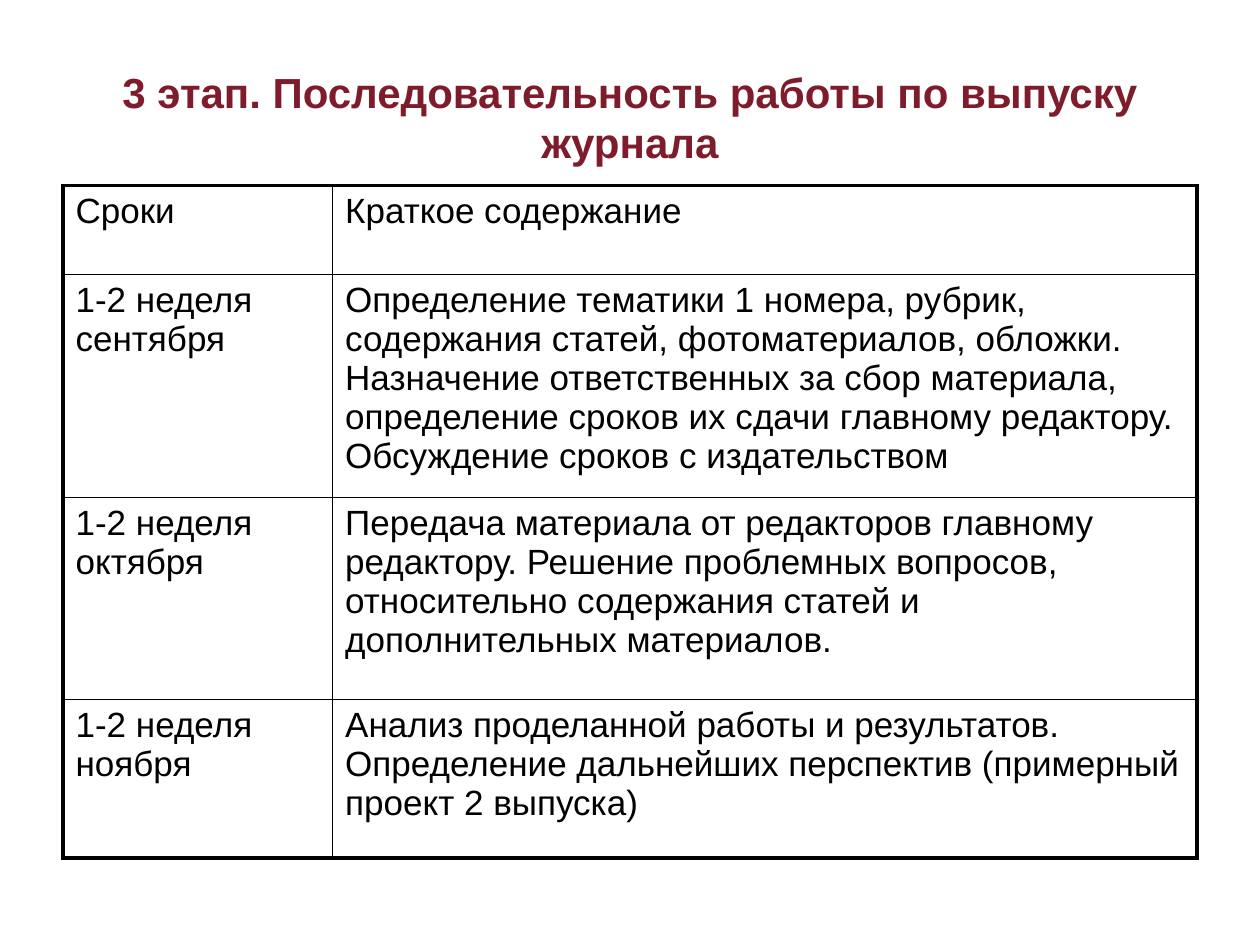
from dataclasses import dataclass

from lxml import etree
from pptx import Presentation
from pptx.dml.color import RGBColor
from pptx.enum.text import MSO_ANCHOR, PP_ALIGN
from pptx.oxml.ns import qn
from pptx.util import Inches, Pt

CENTER = PP_ALIGN.CENTER
LEFT = PP_ALIGN.LEFT
MIDDLE = MSO_ANCHOR.MIDDLE
BLANK_LAYOUT = 6


@dataclass(frozen=True)
class Theme:
    """Colours, font, type sizes and line widths of the slide."""
    font: str = "Arial"
    title_color: str = "7E1C2C"
    text_color: str = "000000"
    border_color: str = "000000"
    title_size: float = 24
    text_size: float = 20
    outer_border: float = 2.25
    inner_border: float = 1


THEME = Theme()
TITLE = "3 этап. Последовательность работы по выпуску журнала"
COLUMN_WIDTHS = (2.14, 6.86)
ROW_HEIGHTS = (0.71, 1.77, 1.6, 1.26)
SCHEDULE = (
    ("Сроки", "Краткое содержание"),
    ("1-2 неделя сентября",
     "Определение тематики 1 номера, рубрик, содержания статей, фотоматериалов, "
     "обложки. Назначение ответственных за сбор материала, определение сроков их "
     "сдачи главному редактору. Обсуждение сроков с издательством"),
    ("1-2 неделя октября",
     "Передача материала от редакторов главному редактору. Решение проблемных "
     "вопросов, относительно содержания статей и дополнительных материалов."),
    ("1-2 неделя ноября",
     "Анализ проделанной работы и результатов. Определение дальнейших перспектив "
     "(примерный проект 2 выпуска)"),
)


def write_text(frame, text, size, color, bold=False, align=LEFT):
    """Put one styled paragraph into a text frame."""
    frame.word_wrap = True
    para = frame.paragraphs[0]
    para.text = text
    para.alignment = align
    para.font.name = THEME.font
    para.font.size = Pt(size)
    para.font.bold = bold
    para.font.color.rgb = RGBColor.from_string(color)


def add_title(page):
    """Add the centred heading."""
    box = page.shapes.add_textbox(Inches(0.5), Inches(0.3), Inches(9), Inches(1.25))
    box.text_frame.vertical_anchor = MIDDLE
    write_text(box.text_frame, TITLE, THEME.title_size, THEME.title_color, True, CENTER)


def set_border(cell, side, width):
    """Draw a solid line on one side of a cell."""
    properties = cell._tc.get_or_add_tcPr()
    line = etree.SubElement(properties, qn(f"a:ln{side}"), w=str(Pt(width)))
    fill = etree.SubElement(line, qn("a:solidFill"))
    etree.SubElement(fill, qn("a:srgbClr"), val=THEME.border_color)


def style_cell(cell, row, column):
    """Give a cell thick lines on the table's edge and thin ones inside."""
    on_edge = {
        "L": column == 0,
        "R": column == len(COLUMN_WIDTHS) - 1,
        "T": row == 0,
        "B": row == len(ROW_HEIGHTS) - 1,
    }
    for side, outer in on_edge.items():
        set_border(cell, side, THEME.outer_border if outer else THEME.inner_border)
    cell.fill.background()


def add_schedule(page):
    """Add the table of terms and tasks."""
    table = page.shapes.add_table(
        len(ROW_HEIGHTS), len(COLUMN_WIDTHS), Inches(0.5), Inches(1.47),
        Inches(sum(COLUMN_WIDTHS)), Inches(sum(ROW_HEIGHTS))).table
    table.first_row = False
    table.horz_banding = False
    for column, width in zip(table.columns, COLUMN_WIDTHS):
        column.width = Inches(width)
    for row, height in zip(table.rows, ROW_HEIGHTS):
        row.height = Inches(height)
    for row, texts in enumerate(SCHEDULE):
        for column, text in enumerate(texts):
            cell = table.cell(row, column)
            write_text(cell.text_frame, text, THEME.text_size, THEME.text_color)
            style_cell(cell, row, column)


def main():
    """Build the slide and save the deck."""
    deck = Presentation()
    deck.slide_width, deck.slide_height = Inches(10), Inches(7.5)
    page = deck.slides.add_slide(deck.slide_layouts[BLANK_LAYOUT])
    add_title(page)
    add_schedule(page)
    deck.save("out.pptx")


if __name__ == "__main__":
    main()
